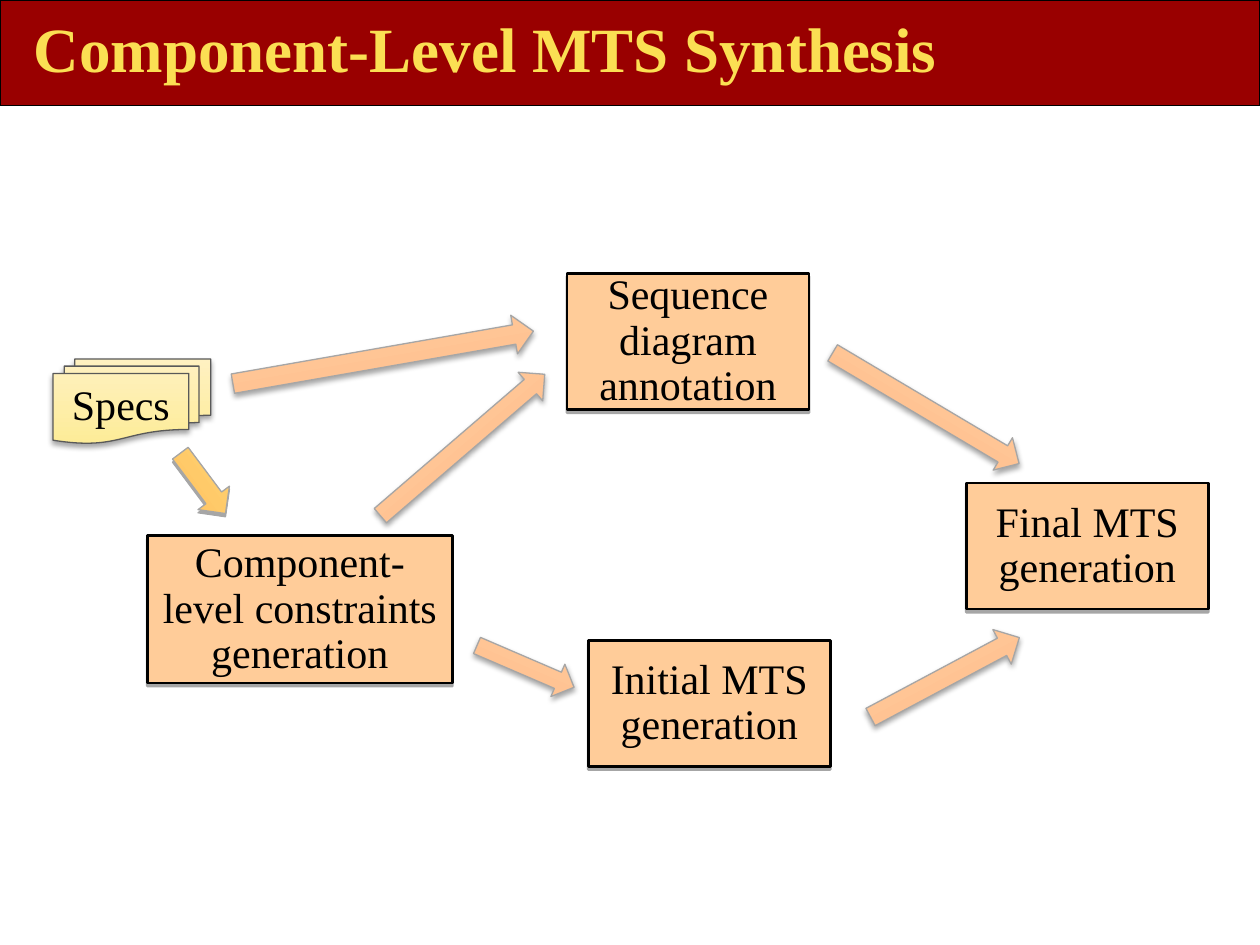
from dataclasses import dataclass

from lxml import etree
from pptx import Presentation
from pptx import util as u
from pptx.dml.color import RGBColor
from pptx.enum import shapes, text
from pptx.oxml.ns import qn


@dataclass(frozen=True)
class Theme:
    """Colours, font and type sizes of the slide."""
    font: str = "Times New Roman"
    title_size: int = 36
    label_size: int = 24
    black: str = "000000"
    banner: str = "990000"
    title: str = "FBDF53"
    step: str = "FFCC99"
    paper: tuple = ("FDEC98", "FFF1C1")
    paper_line: str = "595959"
    arrow: tuple = ("FFBF8C", "FFC99C")
    first_arrow: tuple = ("FFC05E", "FFD474")
    arrow_line: str = "A6A6A6"


THEME = Theme()
KIND = shapes.MSO_SHAPE

STEPS = [
    ("Component-level constraints generation", (2.97, 10.8, 6.15, 2.97)),
    ("Sequence diagram annotation", (11.43, 5.51, 4.88, 2.75)),
    ("Initial MTS generation", (11.86, 12.91, 4.88, 2.54)),
    ("Final MTS generation", (19.48, 9.74, 4.88, 2.54)),
]

ARROWS = [
    ((4.65, 6.81, 6.15, 0.79), 350.1),
    ((9.53, 13.08, 2.13, 0.71), 23.3),
    ((7.14, 8.59, 4.37, 0.76), 319.3),
    ((16.48, 7.85, 4.37, 0.76), 30.7),
    ((17.35, 13.26, 3.4, 0.79), 331.9),
]


def add_figure(page, kind, place, fill, line, weight=0.75):
    """Add a preset shape with a solid colour or a vertical two-colour fill."""
    figure = page.shapes.add_shape(kind, *map(u.Cm, place))
    figure.shadow.inherit = False
    if isinstance(fill, str):
        figure.fill.solid()
        figure.fill.fore_color.rgb = RGBColor.from_string(fill)
    else:
        figure.fill.gradient()
        figure.fill.gradient_angle = 90
        for stop, colour in zip(figure.fill.gradient_stops, fill):
            stop.color.rgb = RGBColor.from_string(colour)
    figure.line.color.rgb = RGBColor.from_string(line)
    figure.line.width = u.Pt(weight)
    return figure


def add_shadow(figure, blur=3.1):
    """Cast a soft shadow straight down from the figure."""
    effects = figure._element.spPr.find(qn("a:effectLst"))
    shadow = etree.SubElement(
        effects, qn("a:outerShdw"), blurRad=str(u.Pt(blur)),
        dist=str(u.Pt(1.8)), dir="5400000", rotWithShape="0")
    colour = etree.SubElement(shadow, qn("a:srgbClr"), val=THEME.black)
    etree.SubElement(colour, qn("a:alpha"), val="35000")


def write(para, words, size, colour, bold=False):
    """Add one formatted run to a paragraph."""
    span = para.add_run()
    span.text = words
    span.font.name = THEME.font
    span.font.size = u.Pt(size)
    span.font.bold = bold
    span.font.color.rgb = RGBColor.from_string(colour)


def add_label(figure, words):
    """Write a centred label inside a figure."""
    frame = figure.text_frame
    frame.word_wrap = True
    frame.vertical_anchor = text.MSO_ANCHOR.MIDDLE
    para = frame.paragraphs[0]
    para.alignment = text.PP_ALIGN.CENTER
    para.line_spacing = 0.9
    para.space_after = u.Pt(6)
    write(para, words, THEME.label_size, THEME.black)


def add_header(page, words):
    """Place the banner behind the title and format the title."""
    banner = add_figure(page, KIND.RECTANGLE, (0, 0, 25.4, 2.13),
                        THEME.banner, THEME.black)
    title = page.shapes.title
    title._element.addprevious(banner._element)
    title.left, title.top, title.width, title.height = map(
        u.Cm, (0.43, -0.1, 19.05, 2.11))
    title.text_frame.vertical_anchor = text.MSO_ANCHOR.MIDDLE
    para = title.text_frame.paragraphs[0]
    para.alignment = text.PP_ALIGN.LEFT
    write(para, words, THEME.title_size, THEME.title, bold=True)


def add_specs(page):
    """Add the stack of specification documents."""
    specs = add_figure(page, KIND.FLOWCHART_MULTIDOCUMENT,
                       (1.07, 7.24, 3.18, 1.7), THEME.paper, THEME.paper_line)
    add_shadow(specs)
    add_label(specs, "Specs")


def add_step(page, words, place):
    """Add a labelled process step."""
    box = add_figure(page, KIND.RECTANGLE, place, THEME.step, THEME.black, 1.5)
    add_shadow(box, blur=0)
    add_label(box, words)


def add_arrow(page, place, angle, fill=THEME.arrow, blur=3.1):
    """Add a rotated block arrow."""
    arrow = add_figure(page, KIND.RIGHT_ARROW, place, fill, THEME.arrow_line)
    arrow.rotation = angle
    add_shadow(arrow, blur)


def main():
    """Build the deck and save it."""
    deck = Presentation()
    deck.slide_width, deck.slide_height = u.Cm(25.4), u.Cm(19.05)
    page = deck.slides.add_slide(deck.slide_layouts.get_by_name("Title Only"))
    add_header(page, "Component-Level MTS Synthesis")
    add_specs(page)
    for words, place in STEPS:
        add_step(page, words, place)
    add_arrow(page, (3.33, 9.35, 1.52, 0.79), 53.2, THEME.first_arrow, blur=0)
    for place, angle in ARROWS:
        add_arrow(page, place, angle)
    deck.save("out.pptx")


if __name__ == "__main__":
    main()
